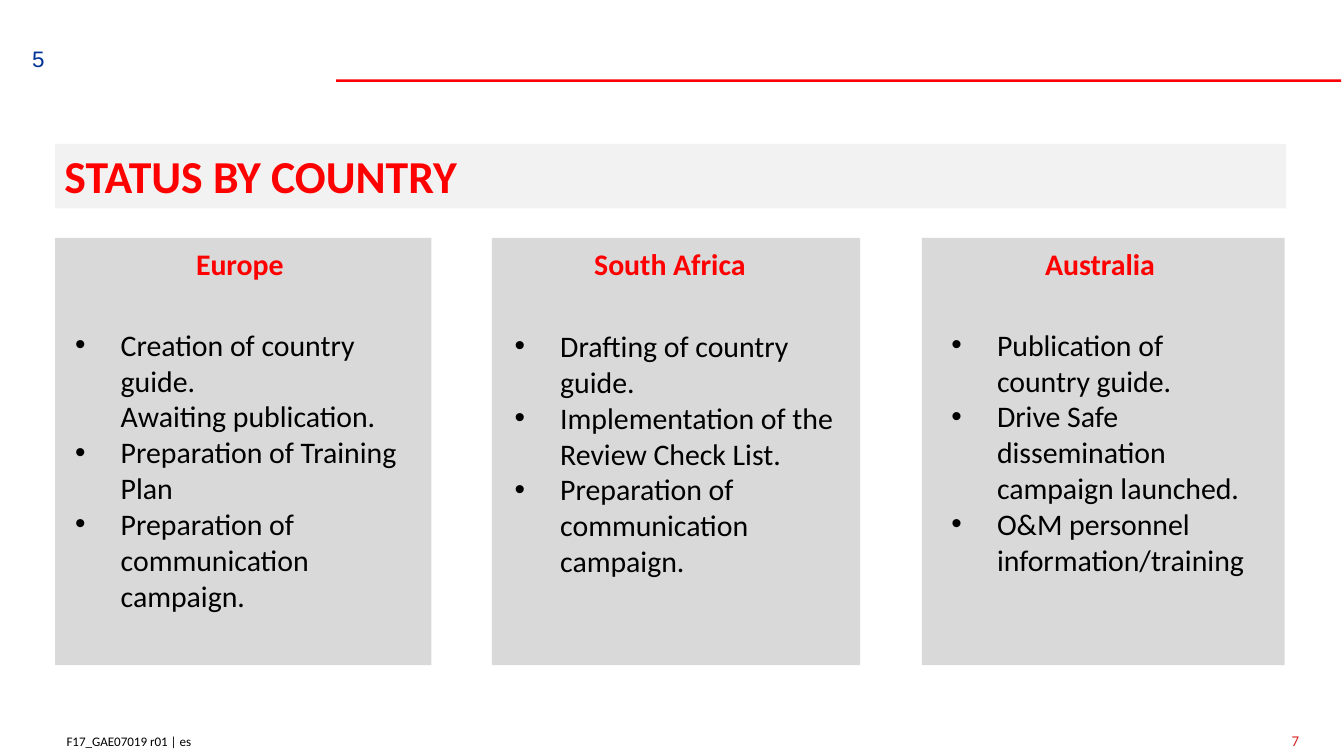
from copy import deepcopy

from lxml import etree
from pptx import Presentation
from pptx.dml.color import RGBColor
from pptx.enum.shapes import MSO_SHAPE
from pptx.enum.text import MSO_ANCHOR, PP_ALIGN
from pptx.oxml.ns import qn
from pptx.util import Inches, Pt

RECT = MSO_SHAPE.RECTANGLE
TOP = MSO_ANCHOR.TOP
LEFT, CENTER, RIGHT = PP_ALIGN.LEFT, PP_ALIGN.CENTER, PP_ALIGN.RIGHT

COLORS = {
    "red": "FF0000", "rule": "FB0007", "page": "DA2424", "blue": "003399",
    "black": "000000", "panel": "D9D9D9", "band": "F2F2F2",
}

TITLE = "STATUS BY COUNTRY"
FOOTER = "F17_GAE07019 r01 | es"
SECTION, PAGE = "5", "7"

# name, panel left and width, heading left, list box, items
COUNTRIES = [
    ("Europe", 0.41, 2.8, 0.96, (0.46, 2.38, 2.65, 2.48), [
        "Creation of country guide.\nAwaiting publication.",
        "Preparation of Training Plan",
        "Preparation of communication campaign."]),
    ("South Africa", 3.66, 2.74, 4.16, (3.73, 2.39, 2.61, 2.18), [
        "Drafting of country guide.",
        "Implementation of the Review Check List.",
        "Preparation of communication campaign."]),
    ("Australia", 6.86, 2.7, 7.36, (6.98, 2.38, 2.51, 2.48), [
        "Publication of country guide.",
        "Drive Safe dissemination campaign launched.",
        "O&M personnel information/training"]),
]
PANEL_TOP, PANEL_HEIGHT = 1.77, 3.18
HEADING_TOP, HEADING_WIDTH, HEADING_HEIGHT = 1.78, 1.65, 0.37
BULLET_INDENT = 0.34
SLIDE_WIDTH = 10

prs = Presentation()
prs.slide_width = Inches(SLIDE_WIDTH)
prs.slide_height = Inches(SLIDE_WIDTH * 9 / 16)
slide = prs.slides.add_slide(prs.slide_layouts[6])


def add_bullet(p):
    pPr = p._p.get_or_add_pPr()
    pPr.set("marL", str(Inches(BULLET_INDENT)))
    pPr.set("indent", str(-Inches(BULLET_INDENT)))
    etree.SubElement(pPr, qn("a:buFont")).set("typeface", "Arial")
    etree.SubElement(pPr, qn("a:buChar")).set("char", "•")


def add_rect(box, color):
    sp = slide.shapes.add_shape(RECT, *map(Inches, box))
    sp.shadow.inherit = False
    sp.fill.solid()
    sp.fill.fore_color.rgb = RGBColor.from_string(COLORS[color])
    sp.line.fill.background()
    return sp


def write(sp, lines, size, color, bold=False, align=LEFT, font="Calibri",
          bullets=False, margins=(0.1, 0.05)):
    tf = sp.text_frame
    tf.word_wrap = True
    tf.vertical_anchor = TOP
    tf.margin_left = tf.margin_right = Inches(margins[0])
    tf.margin_top = tf.margin_bottom = Inches(margins[1])
    for i, line in enumerate(lines):
        p = tf.add_paragraph() if i else tf.paragraphs[0]
        if bullets:
            add_bullet(p)
        p.text = line
        p.alignment = align
        for r in p.runs:
            r.font.size, r.font.name, r.font.bold = Pt(size), font, bold
            r.font.color.rgb = RGBColor.from_string(COLORS[color])
        # Line breaks take the run format so that the line height stays even
        for br in p._p.findall(qn("a:br")):
            br.append(deepcopy(p.runs[0]._r.rPr))


def add_text(box, lines, size, color, **fmt):
    write(slide.shapes.add_textbox(*map(Inches, box)), lines, size, color, **fmt)


add_text((0, 5.41, 1.52, 0.22), [FOOTER], 7, "black", align=RIGHT)
add_rect((2.5, 0.59, 7.48, 0.02), "rule")
add_text((9.57, 5.4, 1.02, 0.22), [PAGE], 8, "page", margins=(0.04, 0.04))
add_text((0.08, 0.29, 0.35, 0.3), [SECTION], 12, "blue", align=RIGHT, font="Arial")

title = add_rect((0.41, 1.07, 9.16, 0.48), "band")
write(title, [TITLE], 24.5, "red", bold=True, margins=(0.07, 0.03))

for name, left, width, heading_left, list_box, items in COUNTRIES:
    add_rect((left, PANEL_TOP, width, PANEL_HEIGHT), "panel")
    add_text((heading_left, HEADING_TOP, HEADING_WIDTH, HEADING_HEIGHT),
             [name], 16, "red", bold=True, align=CENTER)
    add_text(list_box, items, 16, "black", bullets=True)

prs.save("out.pptx")
